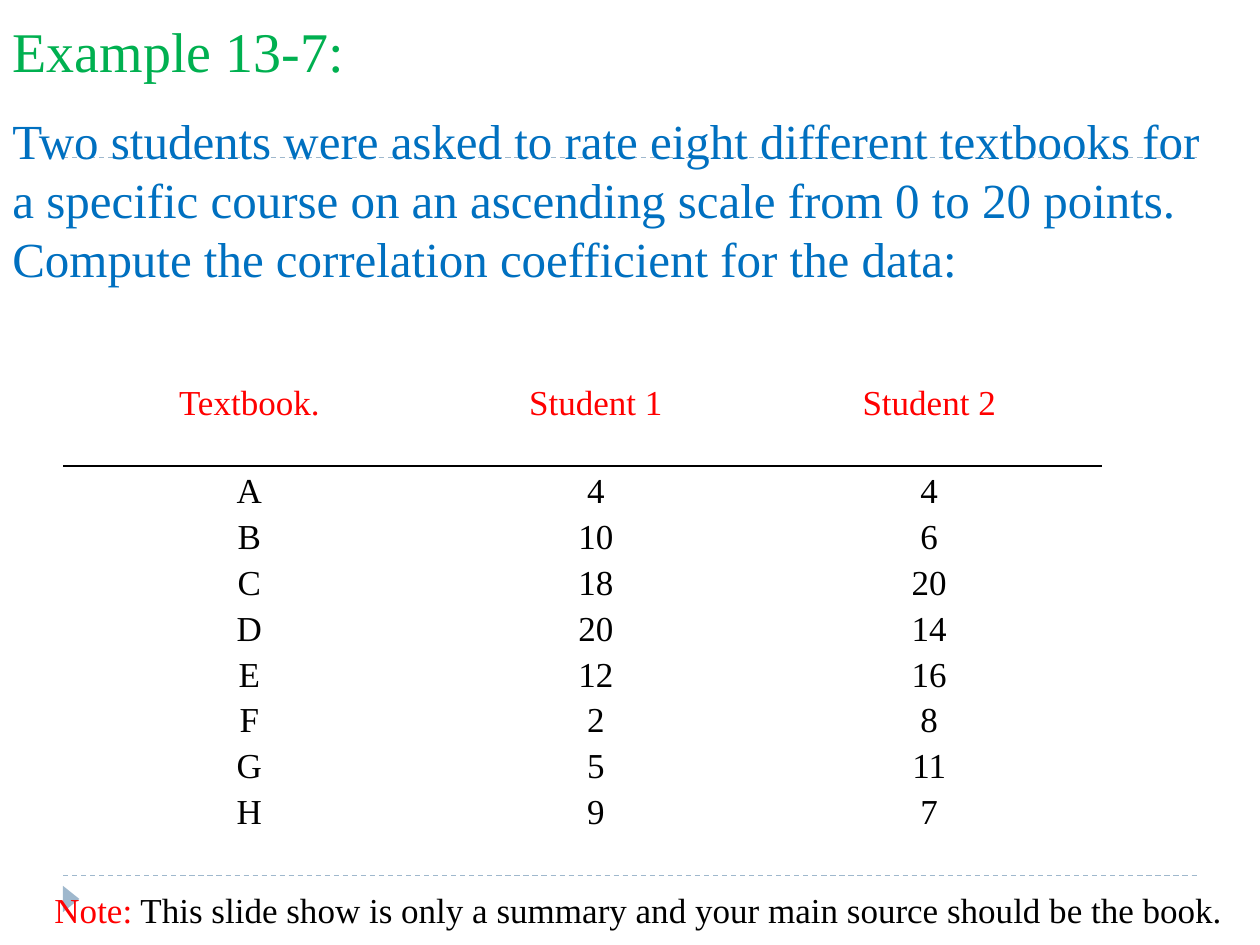
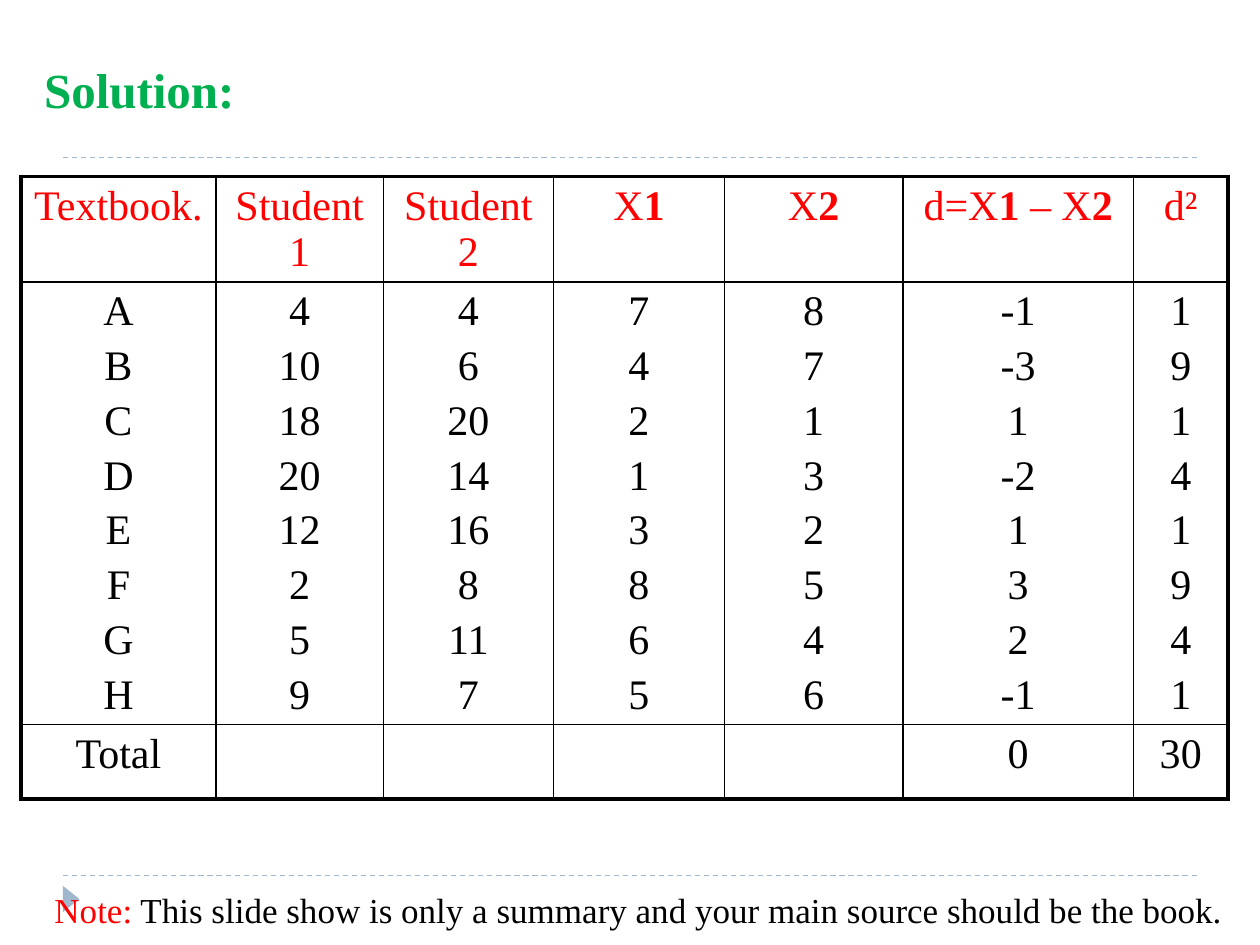
"""Build two slides on the rank correlation of textbook ratings."""
from lxml.etree import SubElement
from pptx import Presentation
from pptx.dml.color import RGBColor
from pptx.enum.dml import MSO_LINE
from pptx.enum.shapes import MSO_CONNECTOR, MSO_SHAPE
from pptx.enum.text import MSO_ANCHOR, MSO_AUTO_SIZE, PP_ALIGN
from pptx.oxml import parse_xml
from pptx.oxml.ns import nsdecls, qn
from pptx.util import Pt

FONT = "Times New Roman"
GREEN = RGBColor(0x00, 0xB0, 0x50)
BLUE = RGBColor(0x00, 0x70, 0xC0)
RED = RGBColor(0xFF, 0x00, 0x00)
BLACK = RGBColor(0x00, 0x00, 0x00)
STEEL = RGBColor(0x9F, 0xB8, 0xCD)

PAGE = (0, 0, 720, 540)
NOTE_BOX = (24, 504, 702, 31.7)
THIN, THICK = 1, 2.25

BOOKS = list("ABCDEFGH")
STUDENT_1 = [4, 10, 18, 20, 12, 2, 5, 9]
STUDENT_2 = [4, 6, 20, 14, 16, 8, 11, 7]
RANK_1 = [7, 4, 2, 1, 3, 8, 6, 5]
RANK_2 = [8, 7, 1, 3, 2, 5, 4, 6]


def add_run(p, text, size, color, bold=False):
    """Append a run in the deck's font."""
    r = p.add_run()
    r.text = text
    style = {"name": FONT, "size": Pt(size), "bold": bold}
    for key, value in style.items():
        setattr(r.font, key, value)
    r.font.color.rgb = color


def fill_text(sp, box, runs, size, wrap=True, bold=False):
    """Place a text shape and write its (text, colour) runs."""
    for key, value in zip(("left", "top", "width", "height"), box):
        setattr(sp, key, Pt(value))
    tf = sp.text_frame
    frame = {"word_wrap": wrap, "auto_size": MSO_AUTO_SIZE.NONE,
             "vertical_anchor": MSO_ANCHOR.TOP}
    for key, value in frame.items():
        setattr(tf, key, value)
    p = tf.paragraphs[0]
    p.alignment = PP_ALIGN.LEFT
    for text, color in runs:
        add_run(p, text, size, color, bold)


def add_rules(slide, box):
    """Draw the dashed rules and the footer arrow within the page box."""
    x, y, width, height = box
    for rule_y in (y + 90, y + height - 39.6):
        line = slide.shapes.add_connector(
            MSO_CONNECTOR.STRAIGHT, Pt(x + 36), Pt(rule_y), Pt(x + width - 36), Pt(rule_y))
        line.line.color.rgb = STEEL
        line.line.width = Pt(0.75)
        line.line.dash_style = MSO_LINE.DASH
        SubElement(line.element.spPr, qn("a:effectLst"))
    arrow = slide.shapes.add_shape(
        MSO_SHAPE.ISOSCELES_TRIANGLE, Pt(x + 33.1), Pt(y + height - 31), Pt(15.1), Pt(9.4))
    arrow.rotation = 90
    arrow.shadow.inherit = False
    arrow.fill.solid()
    arrow.fill.fore_color.rgb = STEEL
    arrow.line.fill.background()


def add_note(slide, box):
    """Write the footer note."""
    sp = slide.shapes.add_textbox(0, 0, 0, 0)
    fill_text(sp, box, [
        ("Note:", RED),
        (" This slide show is only a summary and your main source should be the book.", BLACK),
    ], 20)


def set_borders(cell, widths):
    """Set left, right, top and bottom border widths; zero means no line."""
    tc_pr = cell._tc.get_or_add_tcPr()
    for i, (side, width) in enumerate(zip("LRTB", widths)):
        paint = (f'<a:solidFill><a:srgbClr val="{BLACK}"/></a:solidFill>'
                 if width else "<a:noFill/>")
        tc_pr.insert(i, parse_xml(
            f'<a:ln{side} {nsdecls("a")} w="{Pt(width)}">{paint}</a:ln{side}>'))


def write_cell(cell, lines, size, color):
    """Write centred lines; text between bars is bold."""
    cell.fill.background()
    tf = cell.text_frame
    for i, line in enumerate(lines):
        p = tf.add_paragraph() if i else tf.paragraphs[0]
        p.alignment = PP_ALIGN.CENTER
        if i:
            p.space_before = Pt(size * 0.2)
        for j, part in enumerate(str(line).split("|")):
            if part:
                add_run(p, part, size, color, bold=j % 2 == 1)


def add_ratings(slide, origin, widths, heights, columns, size, borders):
    """Add a three-row table from (header, values, total) columns."""
    x, y = origin
    table = slide.shapes.add_table(
        3, len(columns), Pt(x), Pt(y), Pt(sum(widths)), Pt(sum(heights))).table
    table.first_row = table.horz_banding = False
    for items, sizes, key in ((table.columns, widths, "width"), (table.rows, heights, "height")):
        for item, length in zip(items, sizes):
            setattr(item, key, Pt(length))
    for c, (header, values, total) in enumerate(columns):
        for r, lines in enumerate(([header], values, [total] if total != "" else [])):
            cell = table.cell(r, c)
            write_cell(cell, lines, size, BLACK if r else RED)
            set_borders(cell, borders(r, c))


def header_rule(row, col):
    """Rule off the header row only."""
    return 0, 0, THIN if row == 1 else 0, THIN if row == 0 else 0


def boxed_grid(row, col):
    """Draw a thin grid inside a thick frame."""
    edges = (col == 0, col == 6, row == 0, row == 2)
    return [THICK if edge else THIN for edge in edges]


def example_slide(slide, box):
    """Set the problem with its ratings."""
    x, y = box[:2]
    add_rules(slide, box)
    fill_text(slide.shapes.title, (x, y + 5.8, 206, 46),
              [("Example 13-7:", GREEN)], 32, wrap=False)
    task = slide.shapes.add_textbox(0, 0, 0, 0)
    fill_text(task, (x, y + 59.8, 696, 108), [(
        "Two students were asked to rate eight different textbooks for a specific course "
        "on an ascending scale from 0 to 20 points. "
        "Compute the correlation coefficient for the data:", BLUE)], 28)
    columns = [("Textbook.", BOOKS, ""), ("Student 1", STUDENT_1, ""),
               ("Student 2", STUDENT_2, "")]
    add_ratings(slide, (x + 36, y + 216), (213, 183, 198), (50.4, 211.7, 43.9),
                columns, 20, header_rule)
    add_note(slide, NOTE_BOX)


def solution_slide(slide, box):
    """Show the ranks, their differences and the squares."""
    x, y = box[:2]
    add_rules(slide, box)
    diffs = [a - b for a, b in zip(RANK_1, RANK_2)]
    squares = [d * d for d in diffs]
    columns = [("Textbook.", BOOKS, "Total"), ("Student 1", STUDENT_1, ""),
               ("Student 2", STUDENT_2, ""), ("X|1|", RANK_1, ""), ("X|2|", RANK_2, ""),
               ("d=X|1| – X|2|", diffs, sum(diffs)), ("d²", squares, sum(squares))]
    add_ratings(slide, (x + 12, y + 100.8), (111.4, 95.7, 97.2, 97.7, 102, 131.8, 54),
                (58.3, 245.5, 42.5), columns, 24, boxed_grid)
    fill_text(slide.shapes.title, (x + 18, y + 30.2, 124.6, 41),
              [("Solution:", GREEN)], 28, wrap=False, bold=True)
    add_note(slide, NOTE_BOX)


def main():
    """Build and save the deck."""
    prs = Presentation()
    prs.slide_width, prs.slide_height = Pt(PAGE[2]), Pt(PAGE[3])
    for build in (example_slide, solution_slide):
        build(prs.slides.add_slide(prs.slide_layouts[5]), PAGE)
    prs.save("out.pptx")


if __name__ == "__main__":
    main()
